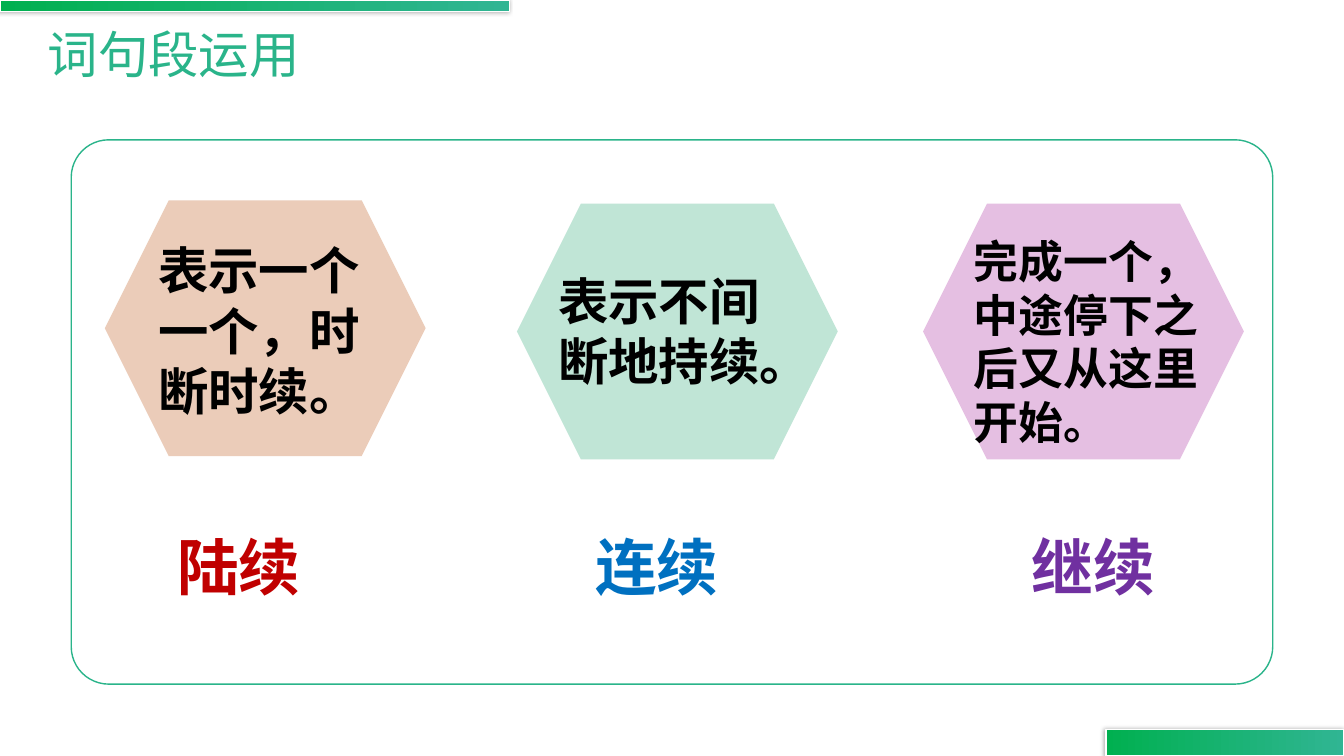
from dataclasses import dataclass

import lxml.etree
import pptx
import pptx.dml.color
import pptx.enum.shapes
import pptx.enum.text
import pptx.oxml.ns
import pptx.util

SHAPES = pptx.enum.shapes.MSO_SHAPE
FIT = pptx.enum.text.MSO_AUTO_SIZE
WIDTH, HEIGHT = 13.33, 7.5


@dataclass(frozen=True)
class Theme:
    font: str = "Arial"
    green: str = "2AB48A"
    bar_start: str = "00B050"
    bar_end: str = "30B593"
    white: str = "FFFFFF"
    black: str = "000000"
    title_size: int = 36
    word_size: int = 44


@dataclass(frozen=True)
class Box:
    left: float
    top: float
    width: float
    height: float

    def inner(self, left, top, width, height):
        """Return a box placed by shares of this one."""
        return Box(self.left + left * self.width, self.top + top * self.height,
                   width * self.width, height * self.height)

    def lengths(self):
        return [pptx.util.Inches(value)
                for value in (self.left, self.top, self.width, self.height)]


@dataclass(frozen=True)
class Card:
    """A hexagon with a meaning, and the word it explains below.

    Places are shares of the panel: hexagon and word as left and top,
    meaning as left, top and height.
    """
    word: str
    meaning: str
    size: int
    fill: str
    word_color: str
    hexagon_at: tuple
    meaning_at: tuple
    word_at: tuple


THEME = Theme()
CARDS = [
    Card("陆续", "表示一个一个，时断时续。", 36, "EBCCB9", "C00000",
         (0.028, 0.111), (0.064, 0.174, 0.356), (0.08, 0.706)),
    Card("连续", "表示不间断地持续。", 36, "C0E5D6", "0070C0",
         (0.371, 0.117), (0.397, 0.23, 0.243), (0.428, 0.706)),
    Card("继续", "完成一个，中途停下之后又从这里开始。", 32, "E5BFE2", "7030A0",
         (0.709, 0.117), (0.743, 0.163, 0.417), (0.791, 0.706)),
]


def rgb(code):
    return pptx.dml.color.RGBColor.from_string(code)


def add_text(para, text, size, color, bold=False):
    span = para.add_run()
    span.text = text
    span.font.name = THEME.font
    span.font.size = pptx.util.Pt(size)
    span.font.bold = bold
    span.font.color.rgb = rgb(color)


def add_label(page, box, text, size, color):
    frame = page.shapes.add_textbox(*box.lengths()).text_frame
    frame.word_wrap = True
    frame.auto_size = FIT.SHAPE_TO_FIT_TEXT
    add_text(frame.paragraphs[0], text, size, color, bold=True)


def add_soft_shadow(shape):
    """Give the shape a faint shadow that falls to the left."""
    shape.shadow.inherit = False
    effects = shape.element.spPr.find(pptx.oxml.ns.qn("a:effectLst"))
    shadow = lxml.etree.SubElement(
        effects, pptx.oxml.ns.qn("a:outerShdw"), blurRad="38100",
        dist="12700", dir="10800000", algn="r", rotWithShape="0")
    color = lxml.etree.SubElement(
        shadow, pptx.oxml.ns.qn("a:srgbClr"), val=THEME.black)
    lxml.etree.SubElement(color, pptx.oxml.ns.qn("a:alpha"), val="30000")


def add_bar(page, box):
    bar = page.shapes.add_shape(SHAPES.RECTANGLE, *box.lengths())
    bar.fill.gradient()
    bar.fill.gradient_angle = 0
    for stop, color in zip(bar.fill.gradient_stops,
                           (THEME.bar_start, THEME.bar_end)):
        stop.color.rgb = rgb(color)
    bar.line.color.rgb = rgb(THEME.white)
    bar.line.width = pptx.util.Pt(1)
    add_soft_shadow(bar)


def add_panel(page, box):
    panel = page.shapes.add_shape(SHAPES.ROUNDED_RECTANGLE, *box.lengths())
    panel.adjustments[0] = 0.069
    panel.shadow.inherit = False
    panel.fill.background()
    panel.line.color.rgb = rgb(THEME.green)
    panel.line.width = pptx.util.Pt(1)


def add_title(page, box, text):
    title = page.shapes.title
    title.left, title.top, title.width, title.height = box.lengths()
    frame = title.text_frame
    frame.auto_size = FIT.NONE
    frame.vertical_anchor = pptx.enum.text.MSO_ANCHOR.MIDDLE
    para = frame.paragraphs[0]
    para.alignment = pptx.enum.text.PP_ALIGN.LEFT
    para.line_spacing = 0.9
    add_text(para, text, THEME.title_size, THEME.green)


def add_card(page, panel, card):
    place = panel.inner(*card.hexagon_at, 0.267, 0.47)
    hexagon = page.shapes.add_shape(SHAPES.HEXAGON, *place.lengths())
    hexagon.shadow.inherit = False
    hexagon.fill.solid()
    hexagon.fill.fore_color.rgb = rgb(card.fill)
    hexagon.line.fill.background()

    left, top, height = card.meaning_at
    add_label(page, panel.inner(left, top, 0.215, height),
              card.meaning, card.size, THEME.black)
    add_label(page, panel.inner(*card.word_at, 0.15, 0.156),
              card.word, THEME.word_size, card.word_color)


def build_word_page(deck):
    page = deck.slides.add_slide(deck.slide_layouts.get_by_name("Title Only"))
    whole = Box(0, 0, WIDTH, HEIGHT)
    panel = whole.inner(0.053, 0.185, 0.894, 0.72)
    add_bar(page, whole.inner(0, 0, 0.379, 0.015))
    add_bar(page, whole.inner(0.823, 0.965, 0.177, 0.035))
    add_panel(page, panel)
    add_title(page, whole.inner(0.028, 0.039, 0.227, 0.073), "词句段运用")
    for card in CARDS:
        add_card(page, panel, card)


def main():
    deck = pptx.Presentation()
    deck.slide_width = pptx.util.Inches(WIDTH)
    deck.slide_height = pptx.util.Inches(HEIGHT)
    build_word_page(deck)
    deck.save("out.pptx")


if __name__ == "__main__":
    main()
